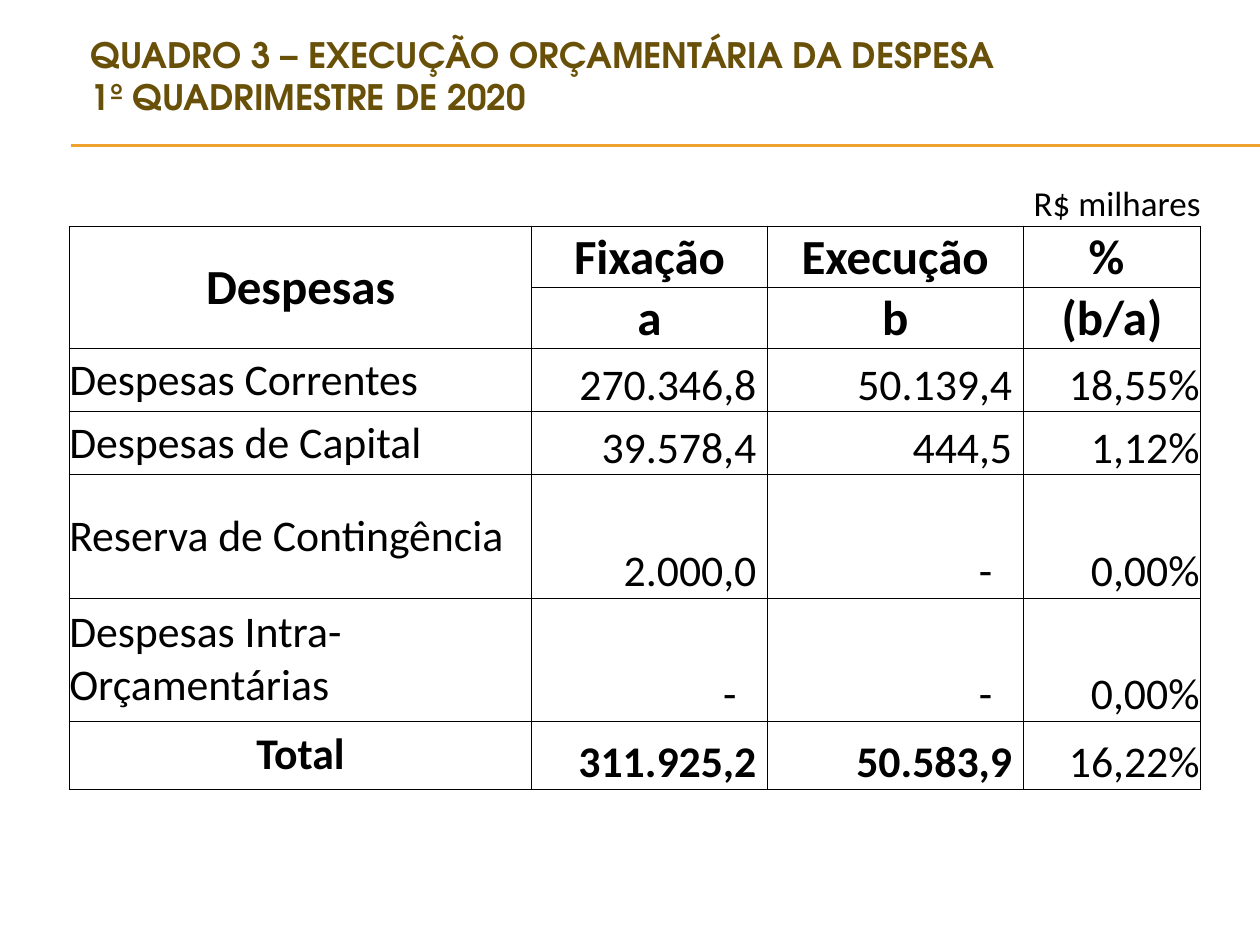
from lxml import etree
from pptx import Presentation
from pptx.dml.color import RGBColor
from pptx.enum.shapes import MSO_CONNECTOR
from pptx.enum.text import MSO_ANCHOR, MSO_AUTO_SIZE, PP_ALIGN
from pptx.oxml.ns import qn
from pptx.util import Pt

LEFT, CENTER, RIGHT = PP_ALIGN.LEFT, PP_ALIGN.CENTER, PP_ALIGN.RIGHT
MIDDLE, BOTTOM = MSO_ANCHOR.MIDDLE, MSO_ANCHOR.BOTTOM
NO_AUTOFIT = MSO_AUTO_SIZE.NONE
STRAIGHT = MSO_CONNECTOR.STRAIGHT
TITLE_ONLY = 5

COLORS = {"title": "695008", "rule": "F0A22E", "text": "000000"}
UNIT = {"align": RIGHT, "size": 20}
HEADER = {"align": CENTER, "size": 28, "bold": True}
LABEL = {"align": LEFT, "anchor": MIDDLE}
VALUE = {"align": RIGHT}
NUMBER_MARGIN = 6.3
DASH_MARGIN = 17.6

COLUMN_WIDTHS = [264.3, 9.4, 125.2, 71.3, 74.9, 101.5]
ROW_HEIGHTS = [27.6, 35.3, 35, 36, 36, 70.3, 70.3, 38.9]
FIXED, EXECUTED, PERCENT = 1, 3, 5
HEADINGS = [
    (FIXED, "Fixação", "a"),
    (EXECUTED, "Execução", "b"),
    (PERCENT, "%", "(b/a)"),
]
EXPENSES = [
    ("Despesas Correntes", "270.346,8", "50.139,4", "18,55%"),
    ("Despesas de Capital", "39.578,4", "444,5", "1,12%"),
    ("Reserva de Contingência", "2.000,0", "-", "0,00%"),
    ("Despesas Intra-Orçamentárias", "-", "-", "0,00%"),
    ("Total", "311.925,2", "50.583,9", "16,22%"),
]


def set_values(target, values):
    for name, value in values.items():
        setattr(target, name, value)


class SlideBuilder:
    heading_font = "TeX Gyre Adventor"
    body_font = "Calibri"

    def __init__(self, presentation):
        self.slide = presentation.slides.add_slide(presentation.slide_layouts[TITLE_ONLY])

    def format_paragraph(self, paragraph, font, size, bold, color, align):
        paragraph.alignment = align
        for run in paragraph.runs:
            set_values(run.font, {"name": font, "size": Pt(size), "bold": bold})
            run.font.color.rgb = RGBColor.from_string(COLORS[color])

    def title(self, text, left, top, width, height):
        shape = self.slide.shapes.title
        set_values(shape, {"left": Pt(left), "top": Pt(top),
                           "width": Pt(width), "height": Pt(height)})
        frame = shape.text_frame
        frame.text = text
        set_values(frame, {"auto_size": NO_AUTOFIT, "vertical_anchor": MIDDLE,
                           "word_wrap": True})
        self.format_paragraph(frame.paragraphs[0], self.heading_font, 20, True, "title", LEFT)

    def rule(self, left, right, top):
        line = self.slide.shapes.add_connector(STRAIGHT, Pt(left), Pt(top), Pt(right), Pt(top))
        line.line.width = Pt(0.75)
        line.line.color.rgb = RGBColor.from_string(COLORS["rule"])
        etree.SubElement(line._element.spPr, qn("a:effectLst"))

    def table(self, left, top, widths, heights):
        frame = self.slide.shapes.add_table(len(heights), len(widths), Pt(left), Pt(top),
                                            Pt(sum(widths)), Pt(sum(heights)))
        table = frame.table
        set_values(table, {"first_row": False, "horz_banding": False})
        for column, width in zip(table.columns, widths):
            column.width = Pt(width)
        for index, (row, height) in enumerate(zip(table.rows, heights)):
            row.height = Pt(height)
            for cell in row.cells:
                cell.fill.background()
                set_values(cell, dict.fromkeys(
                    ("margin_left", "margin_right", "margin_top", "margin_bottom"), 0))
                self.borders(cell, "B" if index == 0 else "LRTB")
        return table

    def borders(self, cell, visible_sides):
        properties = cell._tc.get_or_add_tcPr()
        for index, side in enumerate("LRTB"):
            line = etree.Element(qn(f"a:ln{side}"), w=str(Pt(0.5)))
            if side in visible_sides:
                fill = etree.SubElement(line, qn("a:solidFill"))
                etree.SubElement(fill, qn("a:srgbClr"), val=COLORS["text"])
            else:
                etree.SubElement(line, qn("a:noFill"))
            properties.insert(index, line)

    def cell(self, cell, text, align, size=25, bold=False, anchor=BOTTOM, margin_right=0):
        cell.text = text
        set_values(cell, {"vertical_anchor": anchor, "margin_right": Pt(margin_right)})
        self.format_paragraph(cell.text_frame.paragraphs[0], self.body_font, size, bold,
                              "text", align)


def main():
    presentation = Presentation()
    set_values(presentation, {"slide_width": Pt(720), "slide_height": Pt(540)})
    builder = SlideBuilder(presentation)

    for top in (82.8, 83.4):
        builder.rule(40.4, 720, top)
    builder.title("QUADRO 3 – EXECUÇÃO ORÇAMENTÁRIA DA DESPESA\v1º QUADRIMESTRE DE 2020",
                  44.6, 16.6, 612, 53.3)

    table = builder.table(39.6, 101.5, COLUMN_WIDTHS, ROW_HEIGHTS)
    table.cell(1, 0).merge(table.cell(2, 0))
    for row in range(1, len(ROW_HEIGHTS)):
        for column in (FIXED, EXECUTED):
            table.cell(row, column).merge(table.cell(row, column + 1))

    builder.cell(table.cell(0, PERCENT), "R$ milhares", **UNIT)
    builder.cell(table.cell(1, 0), "Despesas", anchor=MIDDLE, **HEADER)
    for column, name, symbol in HEADINGS:
        margin = NUMBER_MARGIN if name == "%" else 0
        builder.cell(table.cell(1, column), name, margin_right=margin, **HEADER)
        builder.cell(table.cell(2, column), symbol, **HEADER)

    for row, (label, fixed, executed, percent) in enumerate(EXPENSES, start=3):
        is_total = label == "Total"
        label_style = {**LABEL, "align": CENTER, "bold": True} if is_total else LABEL
        builder.cell(table.cell(row, 0), label, **label_style)
        for column, amount in ((FIXED, fixed), (EXECUTED, executed)):
            margin = DASH_MARGIN if amount == "-" else NUMBER_MARGIN
            builder.cell(table.cell(row, column), amount, bold=is_total,
                         margin_right=margin, **VALUE)
        builder.cell(table.cell(row, PERCENT), percent, margin_right=0.7, **VALUE)

    presentation.save("out.pptx")


if __name__ == "__main__":
    main()
